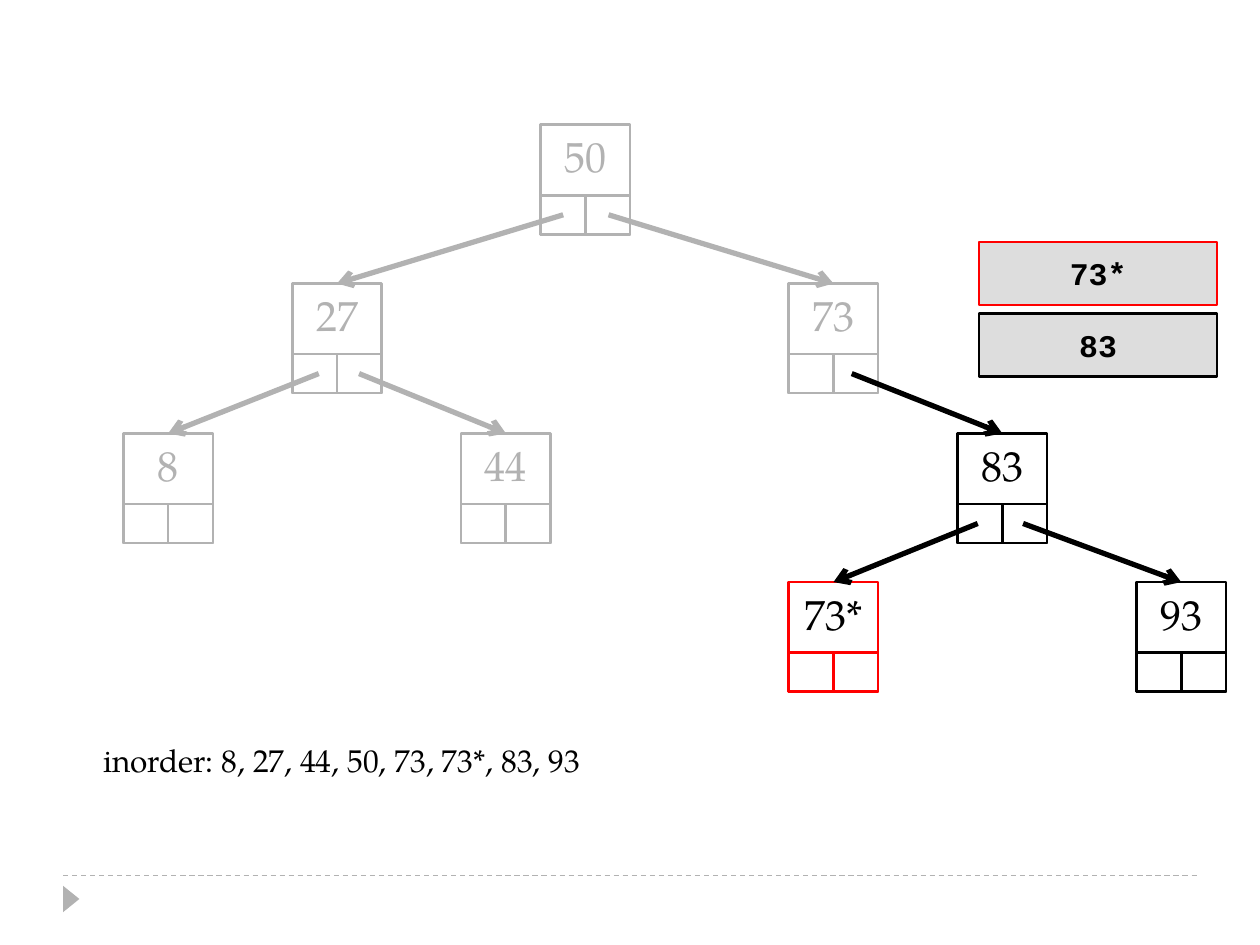
from lxml.etree import SubElement
from pptx import Presentation
from pptx.dml.color import RGBColor
from pptx.enum.dml import MSO_LINE
from pptx.enum.shapes import MSO_CONNECTOR, MSO_SHAPE
from pptx.enum.text import MSO_ANCHOR, MSO_AUTO_SIZE, PP_ALIGN
from pptx.oxml.ns import qn
from pptx.util import Inches, Pt

SERIF, MONO = "TeX Gyre Pagella", "Courier New"
GRAY, BLACK, RED, PALE = "B2B2B2", "000000", "FF0000", "DDDDDD"
NODE_WIDTH, NODE_HEIGHT = 0.71, 0.87
CELL_WIDTH, CELL_HEIGHT = NODE_WIDTH / 2, 0.31
NODES = {
    "50": (4.29, 0.99, GRAY, GRAY),
    "27": (2.32, 2.25, GRAY, GRAY),
    "73": (6.26, 2.25, GRAY, GRAY),
    "8": (0.98, 3.44, GRAY, GRAY),
    "44": (3.66, 3.44, GRAY, GRAY),
    "83": (7.6, 3.44, BLACK, BLACK),
    "73*": (6.26, 4.62, RED, BLACK),
    "93": (9.02, 4.62, BLACK, BLACK),
}
EDGES = [
    ("50", "27", 0.18, GRAY),
    ("50", "73", 0.54, GRAY),
    ("27", "8", 0.21, GRAY),
    ("27", "44", 0.53, GRAY),
    ("83", "73*", 0.16, BLACK),
    ("73", "83", 0.5, BLACK),
    ("83", "93", 0.52, BLACK),
]


def color(value):
    """Turn a hex string into a colour."""
    return RGBColor.from_string(value)


def add_line(page, start, end, line_color, weight):
    """Draw a straight line without a shadow."""
    line = page.shapes.add_connector(
        MSO_CONNECTOR.STRAIGHT, *(Inches(value) for value in (*start, *end)))
    line.line.color.rgb = color(line_color)
    line.line.width = Pt(weight)
    SubElement(line._element.spPr, qn("a:effectLst"))
    return line


def add_box(page, left, top, width, height, line_color, fill=None):
    """Draw an outlined rectangle."""
    box = page.shapes.add_shape(
        MSO_SHAPE.RECTANGLE, *(Inches(value) for value in (left, top, width, height)))
    box.shadow.inherit = False
    if fill:
        box.fill.solid()
        box.fill.fore_color.rgb = color(fill)
    else:
        box.fill.background()
    box.line.color.rgb = color(line_color)
    box.line.width = Pt(1.5)
    return box


def write(box, text, font, size, text_color, anchor, align, bold=False):
    """Put one paragraph of text into a box."""
    box.text_frame.vertical_anchor = anchor
    para = box.text_frame.paragraphs[0]
    para.text = text
    para.alignment = align
    para.font.name = font
    para.font.size = Pt(size)
    para.font.bold = bold
    para.font.color.rgb = color(text_color)


def add_node(page, label, left, top, line_color, text_color):
    """Draw a tree node with its two pointer cells."""
    box = add_box(page, left, top, NODE_WIDTH, NODE_HEIGHT, line_color)
    write(box, label, SERIF, 24, text_color, MSO_ANCHOR.TOP, PP_ALIGN.CENTER)
    box.text_frame.word_wrap = False
    for column in range(2):
        add_box(page, left + column * CELL_WIDTH, top + NODE_HEIGHT - CELL_HEIGHT,
                CELL_WIDTH, CELL_HEIGHT, line_color)


def add_edge(page, parent, child, offset, line_color):
    """Draw an arrow from a pointer cell to the top of the child node."""
    left, top = NODES[parent][:2]
    child_left, child_top = NODES[child][:2]
    arrow = add_line(page, (left + offset, top + NODE_HEIGHT - CELL_HEIGHT / 2),
                     (child_left + NODE_WIDTH / 2, child_top), line_color, 3)
    SubElement(arrow.line._get_or_add_ln(), qn("a:tailEnd"), type="arrow")


def add_tree(page):
    """Draw all nodes and the arrows between them."""
    for label, node in NODES.items():
        add_node(page, label, *node)
    for edge in EDGES:
        add_edge(page, *edge)


def add_stack(page, left, top, width, height, gap):
    """Draw the call stack, newest frame on top."""
    for row, (label, line_color) in enumerate([("73*", RED), ("83", BLACK)]):
        box = add_box(page, left, top + row * (height + gap), width, height,
                      line_color, PALE)
        write(box, label, MONO, 18, BLACK, MSO_ANCHOR.MIDDLE, PP_ALIGN.CENTER, True)


def add_caption(page, left, top, width, height):
    """Write the inorder sequence."""
    box = page.shapes.add_textbox(
        *(Inches(value) for value in (left, top, width, height)))
    box.text_frame.word_wrap = False
    box.text_frame.auto_size = MSO_AUTO_SIZE.SHAPE_TO_FIT_TEXT
    write(box, "inorder: 8, 27, 44, 50, 73, 73*, 83, 93", SERIF, 18, BLACK,
          MSO_ANCHOR.TOP, PP_ALIGN.LEFT)


def add_footer(page, left, top, width):
    """Draw the dashed rule and the triangle marker below it."""
    rule = add_line(page, (left, top), (left + width, top), GRAY, 0.75)
    rule.line.dash_style = MSO_LINE.DASH
    marker = page.shapes.add_shape(
        MSO_SHAPE.ISOSCELES_TRIANGLE, Inches(left - 0.04), Inches(top + 0.12),
        Inches(0.21), Inches(0.13))
    marker.rotation = 90
    marker.shadow.inherit = False
    marker.fill.solid()
    marker.fill.fore_color.rgb = color(GRAY)
    marker.line.fill.background()


def main():
    """Build the slide and save it."""
    deck = Presentation()
    deck.slide_width, deck.slide_height = Inches(10), Inches(7.5)
    page = deck.slides.add_slide(deck.slide_layouts[6])
    add_footer(page, 0.5, 6.95, 9)
    add_tree(page)
    add_caption(page, 0.72, 5.83, 4.02, 0.4)
    add_stack(page, 7.77, 1.92, 1.89, 0.5, 0.07)
    deck.save("out.pptx")


if __name__ == "__main__":
    main()
